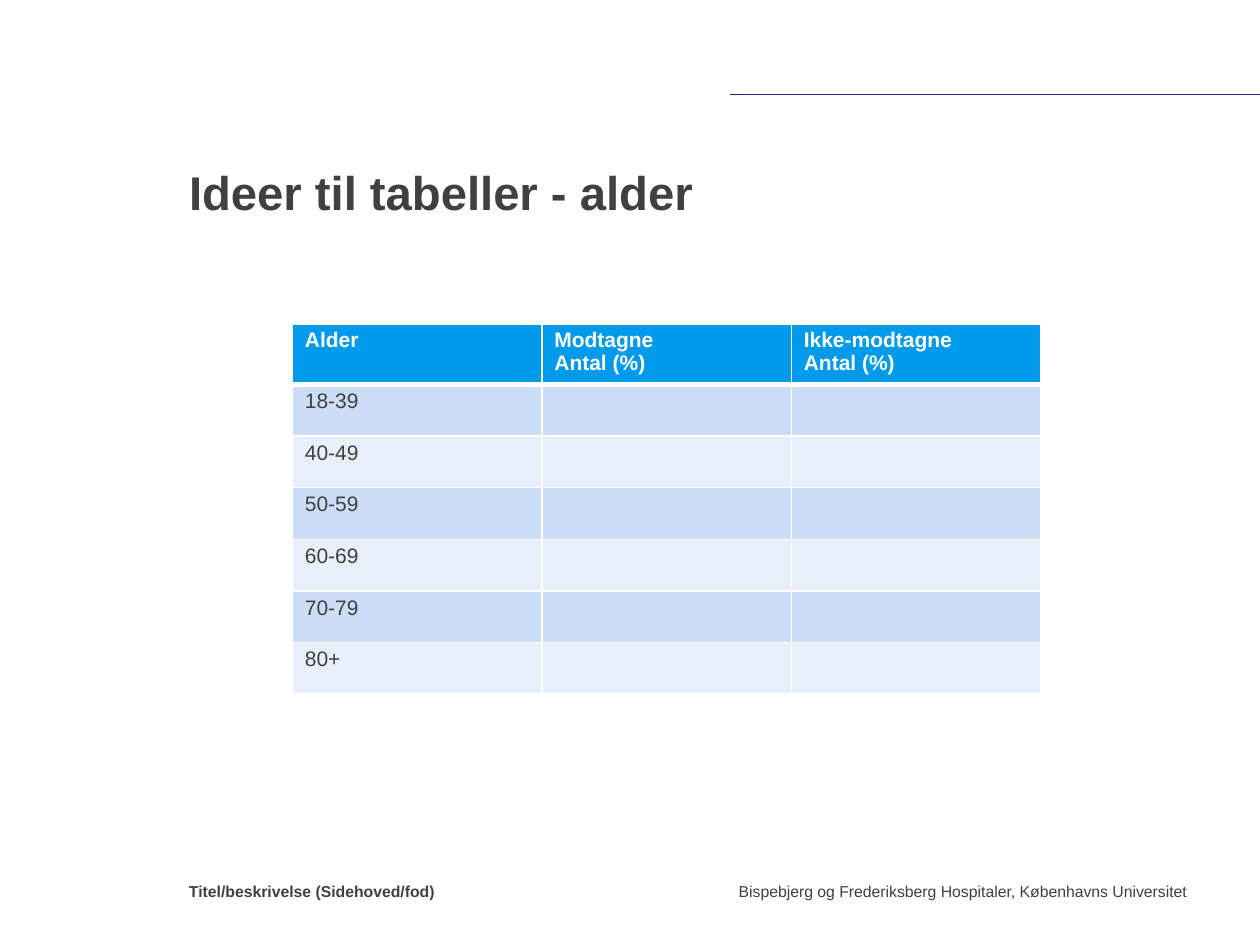
from lxml.etree import SubElement
from pptx import Presentation
from pptx.dml.color import RGBColor
from pptx.enum.shapes import MSO_CONNECTOR as Connector
from pptx.enum.text import MSO_ANCHOR as Anchor, PP_ALIGN as Align
from pptx.oxml.ns import qn
from pptx.util import Inches, Pt

TEXT, WHITE, RULE = "404040", "FFFFFF", "2A216A"
HEADER_FILL, BAND_FILLS = "009AEB", ("CCDEF7", "E7EFFB")

TITLE = "Ideer til tabeller - alder"
FOOTER_LEFT = "Titel/beskrivelse (Sidehoved/fod)"
FOOTER_RIGHT = "Bispebjerg og Frederiksberg Hospitaler, Københavns Universitet"
HEADERS = ["Alder", "Modtagne\nAntal (%)", "Ikke-modtagne\nAntal (%)"]
AGES = ["18-39", "40-49", "50-59", "60-69", "70-79", "80+"]
ROWS = [HEADERS] + [[age, "", ""] for age in AGES]

COLUMN_WIDTH, HEADER_HEIGHT, ROW_HEIGHT = 1.98, 0.47, 0.41


def color(hex_code):
    return RGBColor.from_string(hex_code)


def style(paragraph, size, hex_code, bold):
    for font in [paragraph.font] + [span.font for span in paragraph.runs]:
        font.name, font.size, font.bold = "Arial", Pt(size), bold
        font.color.rgb = color(hex_code)


def add_text(page, text, place, size, bold=False, align=Align.LEFT,
             anchor=Anchor.TOP, spacing=1.0):
    box = page.shapes.add_textbox(*map(Inches, place))
    frame = box.text_frame
    frame.margin_left = frame.margin_right = 0
    frame.margin_top = frame.margin_bottom = 0
    frame.word_wrap = True
    frame.vertical_anchor = anchor
    frame.text = text
    para = frame.paragraphs[0]
    para.alignment, para.line_spacing = align, spacing
    style(para, size, TEXT, bold)


def add_borders(cell, top, bottom):
    """Draw white cell borders; top and bottom are widths in points."""
    properties = cell._tc.get_or_add_tcPr()
    for side, width in (("L", 1), ("R", 1), ("T", top), ("B", bottom)):
        line = SubElement(properties, qn(f"a:ln{side}"), w=str(Pt(width)))
        fill = SubElement(line, qn("a:solidFill"))
        SubElement(fill, qn("a:srgbClr"), val=WHITE)


def add_age_table(page):
    height = HEADER_HEIGHT + ROW_HEIGHT * len(AGES)
    table = page.shapes.add_table(
        len(ROWS), len(HEADERS), Inches(2.32), Inches(2.57),
        Inches(COLUMN_WIDTH * len(HEADERS)), Inches(height)).table
    for column in table.columns:
        column.width = Inches(COLUMN_WIDTH)
    for r, values in enumerate(ROWS):
        header = r == 0
        table.rows[r].height = Inches(HEADER_HEIGHT if header else ROW_HEIGHT)
        for c, value in enumerate(values):
            cell = table.cell(r, c)
            add_borders(cell, top=3 if r == 1 else 1, bottom=3 if header else 1)
            cell.fill.solid()
            cell.fill.fore_color.rgb = color(
                HEADER_FILL if header else BAND_FILLS[(r - 1) % 2])
            cell.text_frame.text = value
            for para in cell.text_frame.paragraphs:
                para.line_spacing = 0.95
                style(para, 12, WHITE if header else TEXT, header)


def add_rule(page):
    rule = page.shapes.add_connector(
        Connector.STRAIGHT, Inches(10), Inches(0.75), Inches(5.79), Inches(0.75))
    rule.line.color.rgb = color(RULE)
    rule.line.width = Pt(0.5)
    SubElement(rule._element.spPr, qn("a:effectLst"))


def main():
    deck = Presentation()
    deck.slide_width, deck.slide_height = Inches(10), Inches(7.5)
    page = deck.slides.add_slide(deck.slide_layouts[6])
    add_rule(page)
    add_text(page, TITLE, (1.5, 0.92, 7.92, 0.83), 27, bold=True,
             anchor=Anchor.BOTTOM, spacing=0.9)
    add_age_table(page)
    add_text(page, FOOTER_RIGHT, (5.16, 7, 4.26, 0.5), 9, align=Align.RIGHT)
    add_text(page, FOOTER_LEFT, (1.5, 7, 3.5, 0.5), 9, bold=True)
    deck.save("out.pptx")


if __name__ == "__main__":
    main()
